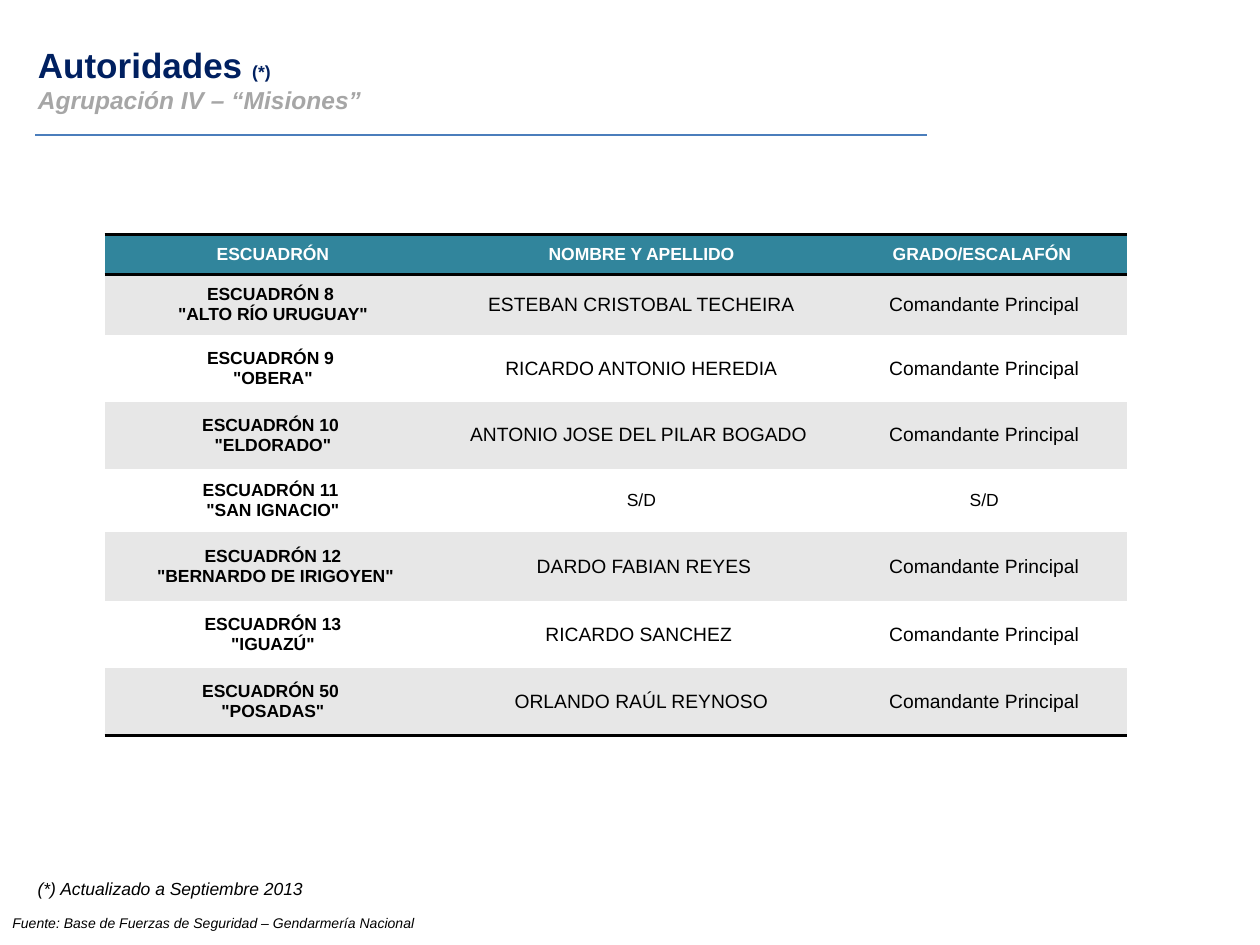
from lxml import etree
from pptx import Presentation
from pptx.dml.color import RGBColor
from pptx.enum.shapes import MSO_CONNECTOR as Connector
from pptx.enum.text import MSO_ANCHOR as Anchor, PP_ALIGN as Align
from pptx.oxml.ns import qn
from pptx.util import Cm, Pt

NAVY, GREY, BLACK, WHITE = "002060", "A6A6A6", "000000", "FFFFFF"
TEAL, BAND, RULE = "31859C", "E7E7E7", "4B7EBC"
RANK = "Comandante Principal"
COLS = [6.78, 8.08, 5.74]
ROW_HEIGHTS = [0.81, 1.22, 1.35, 1.35, 1.27, 1.4, 1.35, 1.35]
HEADER = ["ESCUADRÓN", "NOMBRE Y APELLIDO", "GRADO/ESCALAFÓN "]
SQUADRONS = [
    ["ESCUADRÓN 8 \n\"ALTO RÍO URUGUAY\"", "ESTEBAN CRISTOBAL TECHEIRA", RANK],
    ["ESCUADRÓN 9 \n\"OBERA\"", "RICARDO ANTONIO HEREDIA", RANK],
    ["ESCUADRÓN 10 \n\"ELDORADO\"", "ANTONIO JOSE DEL PILAR BOGADO ", RANK],
    ["ESCUADRÓN 11 \n\"SAN IGNACIO\"", "S/D", "S/D"],
    ["ESCUADRÓN 12\n \"BERNARDO DE IRIGOYEN\"", " DARDO FABIAN REYES", RANK],
    [" ESCUADRÓN 13 \n\"IGUAZÚ\"", "RICARDO SANCHEZ ", RANK],
    ["ESCUADRÓN 50 \n\"POSADAS\"", "ORLANDO RAÚL REYNOSO", RANK],
]


def rgb(color):
    return RGBColor.from_string(color)


def style(r, size, color, bold=False, italic=False):
    f = r.font
    f.name, f.size, f.bold, f.italic = "Arial", Pt(size), bold, italic
    f.color.rgb = rgb(color)


def add_heading(s, x, y, w, h):
    sp = s.shapes.title
    sp.left, sp.top, sp.width, sp.height = Cm(x), Cm(y), Cm(w), Cm(h)
    tf = sp.text_frame
    tf.word_wrap, tf.vertical_anchor = True, Anchor.TOP
    tf.text = "Autoridades \nAgrupación IV – “Misiones”"
    title, subtitle = tf.paragraphs
    title.add_run().text = "(*)"
    for p in tf.paragraphs:
        p.alignment = Align.LEFT
    style(title.runs[0], 20, NAVY, bold=True)
    style(title.runs[1], 10, NAVY, bold=True)
    style(subtitle.runs[0], 14, GREY, bold=True, italic=True)


def add_rule(s, x, y, w):
    line = s.shapes.add_connector(Connector.STRAIGHT, Cm(x), Cm(y), Cm(x + w), Cm(y))
    line.line.color.rgb = rgb(RULE)
    line.line.width = Pt(0.75)
    etree.SubElement(line._element.spPr, qn("a:effectLst"))


def set_borders(cell, top, bottom):
    tcPr = cell._tc.get_or_add_tcPr()
    edges = [("lnL", False), ("lnR", False), ("lnT", top), ("lnB", bottom)]
    for i, (tag, shown) in enumerate(edges):
        ln = etree.Element(qn(f"a:{tag}"), w=str(Pt(2)))
        if shown:
            fill = etree.SubElement(ln, qn("a:solidFill"))
            etree.SubElement(fill, qn("a:srgbClr"), val=BLACK)
        else:
            etree.SubElement(ln, qn("a:noFill"))
        tcPr.insert(i, ln)


def fill_cell(cell, text, fill, size, color, bold):
    cell.fill.solid()
    cell.fill.fore_color.rgb = rgb(fill)
    cell.vertical_anchor = Anchor.MIDDLE
    cell.text_frame.text = text
    for p in cell.text_frame.paragraphs:
        p.alignment = Align.CENTER
        style(p.runs[0], size, color, bold)


def add_authorities(s, x, y):
    rows = [HEADER] + SQUADRONS
    frame = s.shapes.add_table(len(rows), len(COLS), Cm(x), Cm(y),
                               Cm(sum(COLS)), Cm(sum(ROW_HEIGHTS)))
    table = frame.table
    table.horz_banding = False
    for col, w in zip(table.columns, COLS):
        col.width = Cm(w)
    for i, (row, h, texts) in enumerate(zip(table.rows, ROW_HEIGHTS, rows)):
        row.height = Cm(h)
        for j, (cell, text) in enumerate(zip(row.cells, texts)):
            if i == 0:
                fill_cell(cell, text, TEAL, 10, WHITE, True)
            else:
                cell.margin_left = cell.margin_right = 0
                cell.margin_top = cell.margin_bottom = 0
                size = 10 if j == 0 or text == "S/D" else 11
                fill_cell(cell, text, BAND if i % 2 else WHITE, size, BLACK, j == 0)
            set_borders(cell, top=i < 2, bottom=i in (0, len(rows) - 1))


def add_note(s, text, size, x, y, w, h, wrap=True):
    tf = s.shapes.add_textbox(Cm(x), Cm(y), Cm(w), Cm(h)).text_frame
    tf.word_wrap = wrap
    tf.text = text
    style(tf.paragraphs[0].runs[0], size, BLACK, italic=True)


def main():
    prs = Presentation()
    prs.slide_width, prs.slide_height = Cm(25.4), Cm(19.05)
    s = prs.slides.add_slide(prs.slide_layouts[5])
    add_heading(s, 0.51, 0.74, 17.12, 1.7)
    add_note(s, "Fuente: Base de Fuerzas de Seguridad – Gendarmería Nacional",
             8, 0, 18.31, 21.21, 0.6)
    add_rule(s, 0.71, 2.72, 17.98)
    add_authorities(s, 2.11, 4.72)
    add_note(s, "(*) Actualizado a Septiembre 2013", 10, 0.51, 17.58, 5.89, 0.69, wrap=False)
    prs.save("out.pptx")


if __name__ == "__main__":
    main()
